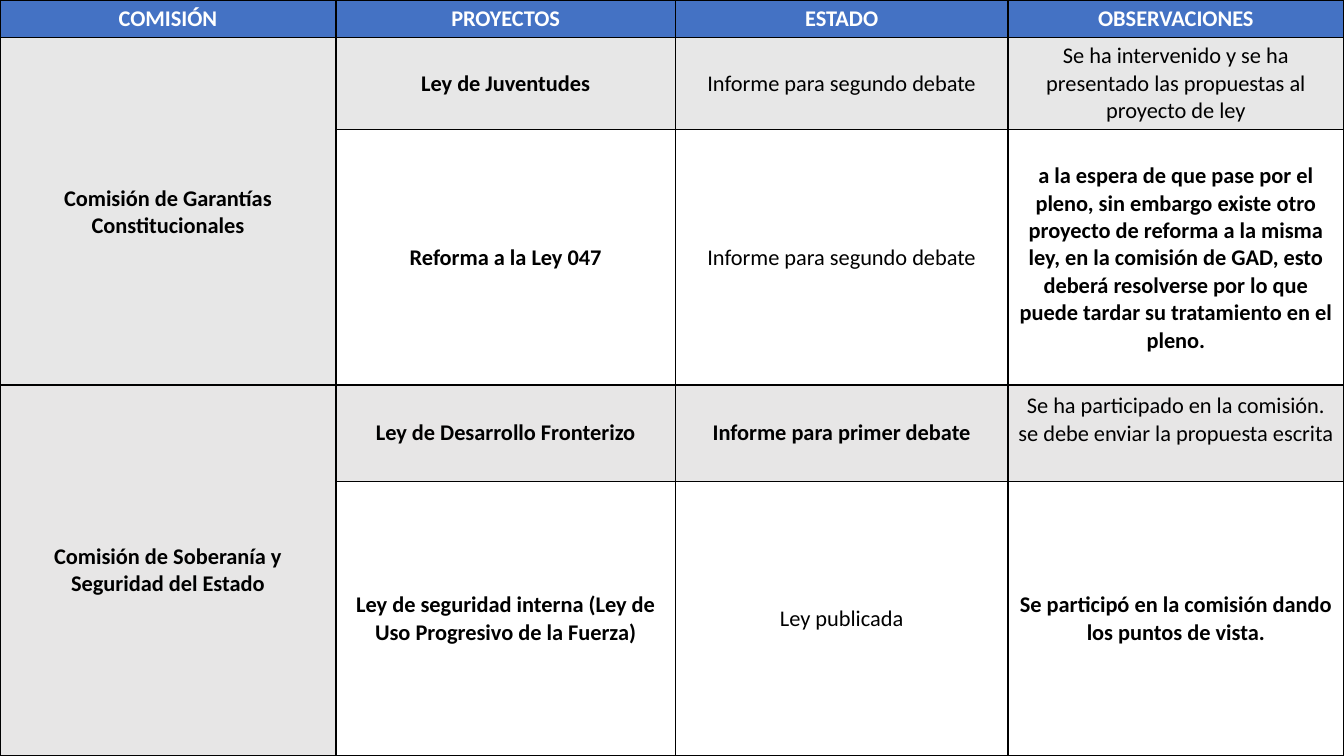
"""Builds a slide with two stacked tables on the state of bills by commission."""
from lxml import etree
from pptx import Presentation
from pptx.dml.color import RGBColor
from pptx.enum.text import MSO_ANCHOR, PP_ALIGN
from pptx.oxml.ns import qn
from pptx.util import Pt

CENTER = PP_ALIGN.CENTER
TOP, MIDDLE = MSO_ANCHOR.TOP, MSO_ANCHOR.MIDDLE
COLORS = {"head": "4472C4", "gray": "E7E7E7", "warm": "E7E6E6",
          "white": "FFFFFF", "black": "000000"}
FORMAT = {"name": "Calibri", "size": Pt(16)}
WIDTHS = [240, 242.5, 237.5, 240]

# Each row: height, fill, bold flag per column, texts
UPPER = [
    (22.3, "head", (1, 1, 1, 1),
     ["COMISIÓN", "PROYECTOS", "ESTADO", "OBSERVACIONES"]),
    (64.1, "gray", (1, 1, 0, 0),
     ["Comisión de Garantías Constitucionales", "Ley de Juventudes",
      "Informe para segundo debate",
      "Se ha intervenido y se ha presentado las propuestas al proyecto de ley"]),
    (183.6, "white", (1, 1, 0, 1),
     ["", "Reforma a la Ley 047", "Informe para segundo debate",
      "a la espera de que pase por el pleno, sin embargo existe otro proyecto "
      "de reforma a la misma ley, en la comisión de GAD, esto deberá resolverse "
      "por lo que puede tardar su tratamiento en el pleno."]),
]
LOWER = [
    (69, "warm", (1, 1, 1, 0),
     ["Comisión de Soberanía y Seguridad del Estado",
      "Ley de Desarrollo Fronterizo", "Informe para primer debate",
      "Se ha participado en la comisión. se debe enviar la propuesta escrita"]),
    (196, "white", (1, 1, 0, 1),
     ["", "Ley de seguridad interna (Ley de Uso Progresivo de la Fuerza)",
      "Ley publicada",
      "Se participó en la comisión dando los puntos de vista."]),
]


def border(cell):
    props = cell._tc.get_or_add_tcPr()
    for spot, side in enumerate(("lnL", "lnR", "lnT", "lnB")):
        line = etree.Element(qn(f"a:{side}"), w=str(Pt(1)))
        fill = etree.SubElement(line, qn("a:solidFill"))
        etree.SubElement(fill, qn("a:srgbClr"), val=COLORS["black"])
        props.insert(spot, line)


def write(cell, text, bold, color):
    para = cell.text_frame.paragraphs[0]
    para.alignment = CENTER
    run = para.add_run()
    run.text = text
    for key, value in FORMAT.items():
        setattr(run.font, key, value)
    run.font.bold = bool(bold)
    run.font.color.rgb = RGBColor.from_string(COLORS[color])


deck = Presentation()
deck.slide_width, deck.slide_height = Pt(960), Pt(540)
slide = deck.slides.add_slide(deck.slide_layouts[6])

tables = []
for top, height, rows in ((0, 275, UPPER), (275, 265, LOWER)):
    frame = slide.shapes.add_table(len(rows), len(WIDTHS), 0, Pt(top), Pt(960), Pt(height))
    table = frame.table
    table.first_row = table.horz_banding = False
    for column, width in zip(table.columns, WIDTHS):
        column.width = Pt(width)
    for r, (tall, fill, flags, texts) in enumerate(rows):
        table.rows[r].height = Pt(tall)
        head = fill == "head"
        for c, (bold, text) in enumerate(zip(flags, texts)):
            cell = table.cell(r, c)
            cell.vertical_anchor = TOP if head else MIDDLE
            cell.fill.solid()
            cell.fill.fore_color.rgb = RGBColor.from_string(COLORS[fill])
            border(cell)
            if text:
                write(cell, text, bold, "white" if head else "black")
    last = len(rows) - 1
    table.cell(last - 1, 0).merge(table.cell(last, 0))
    frame.height = Pt(height)
    tables.append(table)

tables[1].cell(0, 3).margin_bottom = Pt(23)

deck.save("out.pptx")
